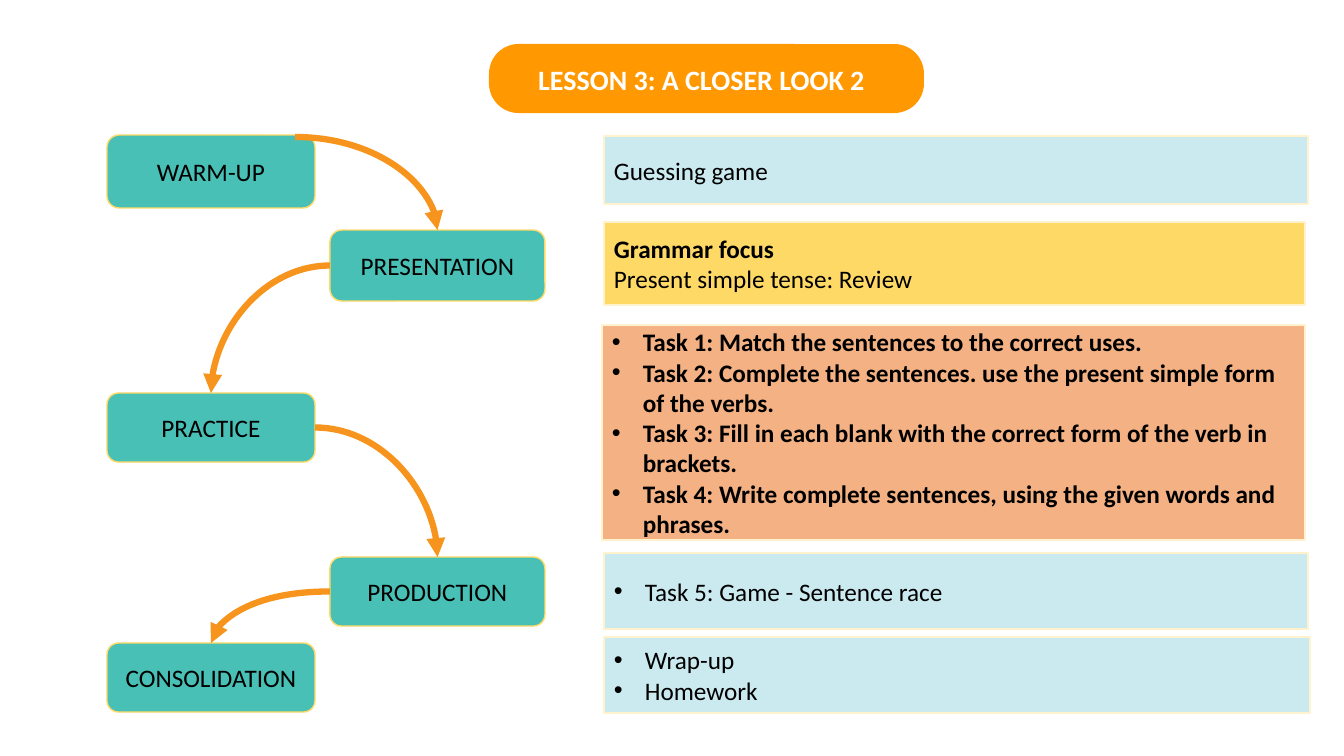
"""Build the lesson overview slide: five linked stages with their activities."""
import pptx
import pptx.chart.data
import pptx.dml.color
import pptx.enum.shapes
import pptx.enum.text
import pptx.oxml
import pptx.oxml.ns
import pptx.util

TITLE = "LESSON 3: A CLOSER LOOK 2"
FONT = "Calibri"
TEAL, GOLD, CREAM, BLUE, SALMON = "48C0B6", "FFD966", "FFF2CC", "CBEAF0", "F4B183"
ORANGE, ARROW, BLACK, WHITE = "FF9801", "F7941E", "000000", "FFFFFF"

LEFT_COLUMN, RIGHT_COLUMN = (107, 208), (330, 215)
STAGES = [
    ("WARM-UP", LEFT_COLUMN, 135, 73),
    ("PRESENTATION", RIGHT_COLUMN, 230, 71),
    ("PRACTICE", LEFT_COLUMN, 393, 69),
    ("PRODUCTION", RIGHT_COLUMN, 557, 69),
    ("CONSOLIDATION", LEFT_COLUMN, 643, 69),
]
WARM_UP_EXIT = (295, 137)

# (box, fill, bulleted, [(text, bold)])
ACTIVITIES = [
    ((604, 136, 704, 68), BLUE, False, [("Guessing game", False)]),
    ((604, 222, 701, 83), GOLD, False, [
        ("Grammar focus", True),
        ("Present simple tense: Review", False)]),
    ((602, 325, 703, 215), SALMON, True, [
        ("Task 1: Match the sentences to the correct uses.", True),
        ("Task 2: Complete the sentences. use the present simple form of the verbs.", True),
        ("Task 3: Fill in each blank with the correct form of the verb in brackets.", True),
        ("Task 4: Write complete sentences, using the given words and phrases.", True)]),
    ((604, 553, 704, 76), BLUE, True, [("Task 5: Game - Sentence race", False)]),
    ((604, 637, 706, 76), BLUE, True, [("Wrap-up", False), ("Homework", False)]),
]
BULLET_INDENT = 31

SHAPE = pptx.enum.shapes.MSO_SHAPE
ALIGN = pptx.enum.text.PP_ALIGN
EMU_PER_PX = 914400 / 100.8


def px(length):
    return pptx.util.Emu(round(length * EMU_PER_PX))


def colour(hex_string):
    return pptx.dml.color.RGBColor.from_string(hex_string)


def add_box(kind, box, fill, line=None):
    shape = slide.shapes.add_shape(kind, *map(px, box))
    shape.shadow.inherit = False
    shape.fill.solid()
    shape.fill.fore_color.rgb = colour(fill)
    if line:
        shape.line.color.rgb = colour(line)
        shape.line.width = pptx.util.Pt(1)
    else:
        shape.line.fill.background()
    return shape


def write(paragraph, text, align, size=18, bold=False, ink=BLACK):
    paragraph.text = text
    paragraph.alignment = align
    font = paragraph.font
    font.name, font.size, font.bold = FONT, pptx.util.Pt(size), bold
    font.color.rgb = colour(ink)


def add_bullet(paragraph):
    properties = paragraph._p.get_or_add_pPr()
    properties.set("marL", str(px(BULLET_INDENT)))
    properties.set("indent", str(-px(BULLET_INDENT)))
    namespace = pptx.oxml.ns.nsdecls("a")
    marks = [pptx.oxml.parse_xml(f'<a:buFont {namespace} typeface="Arial"/>'),
             pptx.oxml.parse_xml(f'<a:buChar {namespace} char="•"/>')]
    for position, mark in enumerate(marks):
        properties.insert(position, mark)


def add_arrow(start, end):
    arrow = slide.shapes.add_connector(
        pptx.enum.shapes.MSO_CONNECTOR.CURVE, *map(px, start + end))
    arrow.line.color.rgb = colour(ARROW)
    arrow.line.width = pptx.util.Pt(4.5)
    properties = arrow._element.spPr
    properties.find(pptx.oxml.ns.qn("a:prstGeom")).set("prst", "curvedConnector2")
    namespace = pptx.oxml.ns.nsdecls("a")
    arrow.line._get_or_add_ln().append(
        pptx.oxml.parse_xml(f'<a:tailEnd {namespace} type="triangle"/>'))
    properties.append(pptx.oxml.parse_xml(f"<a:effectLst {namespace}/>"))


deck = pptx.Presentation()
deck.slide_width, deck.slide_height = px(1344), px(756)
slide = deck.slides.add_slide(deck.slide_layouts[5])

banner = add_box(SHAPE.ROUNDED_RECTANGLE, (489, 44, 435, 69), ORANGE)
banner.adjustments[0] = 0.43
title = slide.shapes.title
title.left, title.top, title.width, title.height = map(px, (528, 57, 396, 44))
title.text_frame.vertical_anchor = pptx.enum.text.MSO_ANCHOR.TOP
write(title.text_frame.paragraphs[0], TITLE, ALIGN.LEFT, 20, True, WHITE)
banner._element.addnext(title._element)

for name, (left, width), top, height in STAGES:
    stage = add_box(SHAPE.ROUNDED_RECTANGLE, (left, top, width, height), TEAL, GOLD)
    write(stage.text_frame.paragraphs[0], name, ALIGN.CENTER)

for box, fill, bulleted, lines in ACTIVITIES:
    frame = add_box(SHAPE.RECTANGLE, box, fill, CREAM).text_frame
    for number, (text, bold) in enumerate(lines):
        paragraph = frame.add_paragraph() if number else frame.paragraphs[0]
        write(paragraph, text, ALIGN.LEFT, bold=bold)
        if bulleted:
            add_bullet(paragraph)

for number, (source, target) in enumerate(zip(STAGES, STAGES[1:])):
    (_, (left, width), top, height), (_, (next_left, next_width), next_top, _) = source, target
    side = left + width if next_left > left else left
    start = (side, top + height / 2) if number else WARM_UP_EXIT
    add_arrow(start, (next_left + next_width / 2, next_top))

deck.save("out.pptx")
